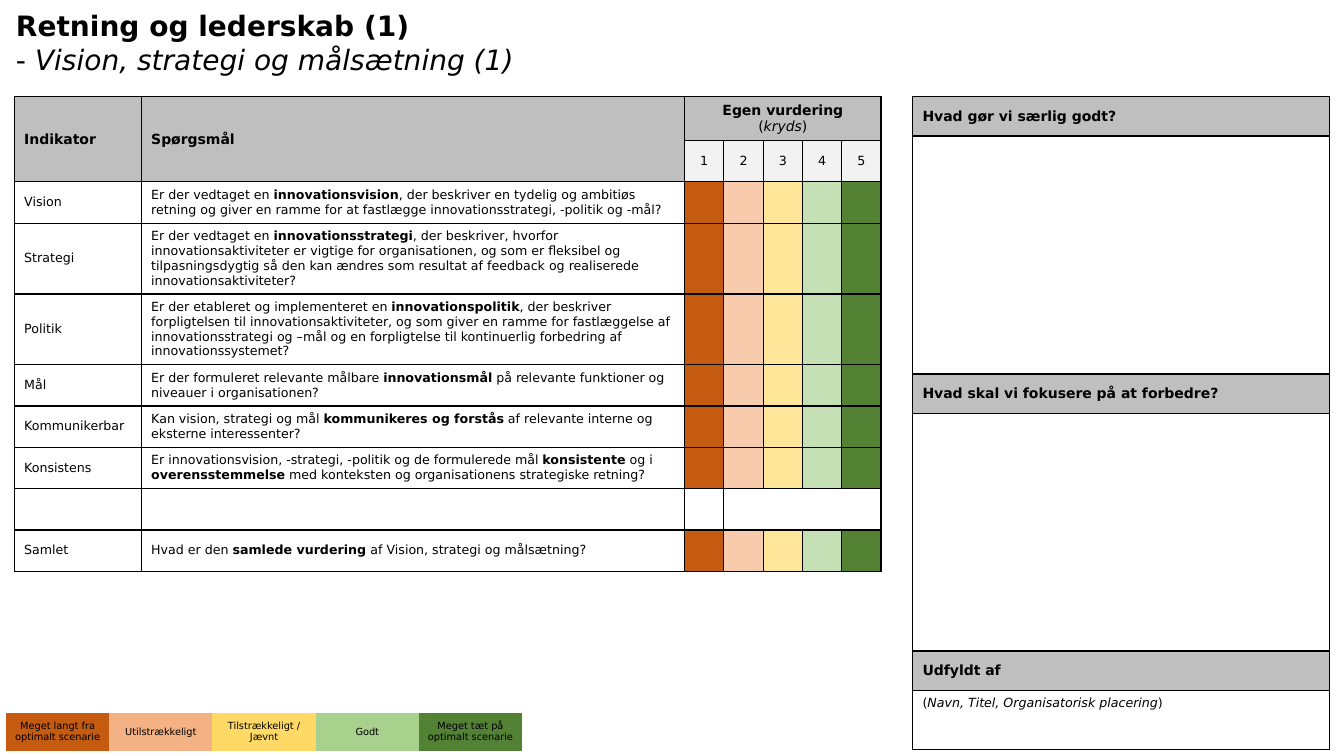
from pptx import Presentation
from pptx.dml.color import RGBColor
from pptx.enum.text import MSO_ANCHOR as Anchor, PP_ALIGN as Align
from pptx.oxml import parse_xml
from pptx.oxml.ns import nsdecls
from pptx.util import Inches, Pt

FONT = "DejaVu Sans"
BLACK = RGBColor(0x00, 0x00, 0x00)
HEADER_GREY = RGBColor(0xBF, 0xBF, 0xBF)
LIGHT_GREY = RGBColor(0xF2, 0xF2, 0xF2)
RUST = RGBColor(0xC5, 0x5A, 0x11)
GREEN = RGBColor(0x54, 0x82, 0x35)
SCORE_COLORS = [RUST, RGBColor(0xF8, 0xCB, 0xAD), RGBColor(0xFF, 0xE6, 0x99),
                RGBColor(0xC5, 0xE0, 0xB4), GREEN]
PLAIN_STYLE = "{2D5ABB26-0587-4C30-8999-92F81FD0307C}"

QUESTIONS = [
    ("Vision", ["Er der vedtaget en ", "innovationsvision",
                ", der beskriver en tydelig og ambitiøs retning og giver en ramme for at "
                "fastlægge innovationsstrategi, -politik og -mål?"]),
    ("Strategi", ["Er der vedtaget en ", "innovationsstrategi",
                  ", der beskriver, hvorfor innovationsaktiviteter er vigtige for "
                  "organisationen, og som er fleksibel og tilpasningsdygtig så den kan ændres "
                  "som resultat af feedback og realiserede innovationsaktiviteter?"]),
    ("Politik", ["Er der etableret og implementeret en ", "innovationspolitik",
                 ", der beskriver forpligtelsen til innovationsaktiviteter, og som giver en "
                 "ramme for fastlæggelse af innovationsstrategi og –mål og en forpligtelse "
                 "til kontinuerlig forbedring af innovationssystemet?"]),
    ("Mål", ["Er der formuleret relevante målbare ", "innovationsmål",
             " på relevante funktioner og niveauer i organisationen?"]),
    ("Kommunikerbar", ["Kan vision, strategi og mål ", "kommunikeres og forstås",
                       " af relevante interne og eksterne interessenter?"]),
    ("Konsistens", ["Er innovationsvision, -strategi, -politik og de formulerede mål ",
                    "konsistente", " og i ", "overensstemmelse",
                    " med konteksten og organisationens strategiske retning?"]),
    None,
    ("Samlet", ["Hvad er den ", "samlede vurdering ",
                "af Vision, strategi og målsætning?"]),
]
SIDE_ROWS = [
    (0.39, "Hvad gør vi særlig godt?"),
    (2.36, None),
    (0.39, "Hvad skal vi fokusere på at forbedre?"),
    (2.36, None),
    (0.39, "Udfyldt af"),
    (0.59, None),
]
LEGEND = [
    ("Meget langt fra optimalt scenarie", RUST, 10),
    ("Utilstrækkeligt", RGBColor(0xF4, 0xB1, 0x83), 0),
    ("Tilstrækkeligt / Jævnt", RGBColor(0xFF, 0xD9, 0x66), 10),
    ("Godt", RGBColor(0xA9, 0xD1, 0x8E), 0),
    ("Meget tæt på optimalt scenarie", GREEN, 10),
]


def add_runs(paragraph, size, *runs):
    for text, style in runs:
        run = paragraph.add_run()
        run.text = text
        run.font.name = FONT
        run.font.size = Pt(size)
        run.font.color.rgb = BLACK
        run.font.bold = style == "bold"
        run.font.italic = style == "italic"


def add_grid(left, top, widths, heights, borders):
    frame = slide.shapes.add_table(len(heights), len(widths), Inches(left), Inches(top),
                                   Inches(sum(widths)), Inches(sum(heights)))
    table = frame.table
    table.first_row = False
    table.horz_banding = False
    table._tbl.tblPr[0].text = PLAIN_STYLE
    for column, width in zip(table.columns, widths):
        column.width = Inches(width)
    for row_index, height in enumerate(heights):
        table.rows[row_index].height = Inches(height)
        for column_index in range(len(widths)):
            cell = table.cell(row_index, column_index)
            cell.vertical_anchor = Anchor.MIDDLE
            for side in borders(row_index, column_index):
                cell._tc.get_or_add_tcPr().append(parse_xml(
                    f'<a:ln{side} {nsdecls("a")} w="12700"><a:solidFill>'
                    f'<a:srgbClr val="{BLACK}"/></a:solidFill></a:ln{side}>'))
    return table


presentation = Presentation()
presentation.slide_width = Inches(13.33)
presentation.slide_height = Inches(7.5)
slide = presentation.slides.add_slide(presentation.slide_layouts[6])

title = slide.shapes.add_textbox(Inches(0.06), Inches(0.04), Inches(9.92), Inches(0.77))
title.text_frame.word_wrap = True
add_runs(title.text_frame.paragraphs[0], 20, ("Retning og lederskab (1)", "bold"))
add_runs(title.text_frame.add_paragraph(), 20,
         ("- ", ""), ("Vision, strategi og målsætning (1)", "italic"))

blank_row = 2 + QUESTIONS.index(None)
blank_sides = {2: "LTB", 3: "TB", 4: "TB", 5: "TB", 6: "RTB"}
assessment = add_grid(
    0.14, 0.96, [1.26, 5.39] + [0.39] * 5, [0.39] + [0.41] * 9,
    lambda row, column: blank_sides.get(column, "LRTB") if row == blank_row else "LRTB")

for column, heading in enumerate(["Indikator", "Spørgsmål"]):
    cell = assessment.cell(0, column)
    cell.merge(assessment.cell(1, column))
    add_runs(cell.text_frame.paragraphs[0], 10, (heading, "bold"))
rating = assessment.cell(0, 2)
rating.merge(assessment.cell(0, 6))
paragraph = rating.text_frame.paragraphs[0]
paragraph.alignment = Align.CENTER
add_runs(paragraph, 10, ("Egen vurdering", "bold"))
paragraph.add_line_break()
add_runs(paragraph, 10, ("(", ""), ("kryds", "italic"), (")", ""))
for column in range(3):
    cell = assessment.cell(0, column)
    cell.fill.solid()
    cell.fill.fore_color.rgb = HEADER_GREY

for score in range(1, 6):
    cell = assessment.cell(1, score + 1)
    cell.fill.solid()
    cell.fill.fore_color.rgb = LIGHT_GREY
    cell.text_frame.paragraphs[0].alignment = Align.CENTER
    add_runs(cell.text_frame.paragraphs[0], 9, (str(score), ""))

for row, question in enumerate(QUESTIONS, 2):
    if question is None:
        continue
    indicator, parts = question
    add_runs(assessment.cell(row, 0).text_frame.paragraphs[0], 9, (indicator, ""))
    add_runs(assessment.cell(row, 1).text_frame.paragraphs[0], 9,
             *[(part, "bold" if index % 2 else "") for index, part in enumerate(parts)])
    for column, color in enumerate(SCORE_COLORS, 2):
        cell = assessment.cell(row, column)
        cell.fill.solid()
        cell.fill.fore_color.rgb = color

notes = add_grid(9.05, 0.96, [4.14], [height for height, _ in SIDE_ROWS],
                 lambda row, column: "LRTB")
for row, (_, heading) in enumerate(SIDE_ROWS):
    if heading:
        cell = notes.cell(row, 0)
        cell.fill.solid()
        cell.fill.fore_color.rgb = HEADER_GREY
        add_runs(cell.text_frame.paragraphs[0], 10, (heading, "bold"))
signature = notes.cell(5, 0)
signature.vertical_anchor = Anchor.TOP
add_runs(signature.text_frame.paragraphs[0], 9,
         ("(", ""), ("Navn, Titel, Organisatorisk placering", "italic"), (")", ""))

legend = add_grid(0.06, 7.07, [5.12 / 5] * 5, [0.38], lambda row, column: "")
for column, (label, color, space_before) in enumerate(LEGEND):
    cell = legend.cell(0, column)
    cell.margin_left = cell.margin_right = Inches(0.07)
    cell.margin_top = cell.margin_bottom = Inches(0)
    cell.fill.solid()
    cell.fill.fore_color.rgb = color
    paragraph = cell.text_frame.paragraphs[0]
    paragraph.alignment = Align.CENTER
    paragraph.space_before = Pt(space_before)
    add_runs(paragraph, 7, (label, ""))

presentation.save("out.pptx")
